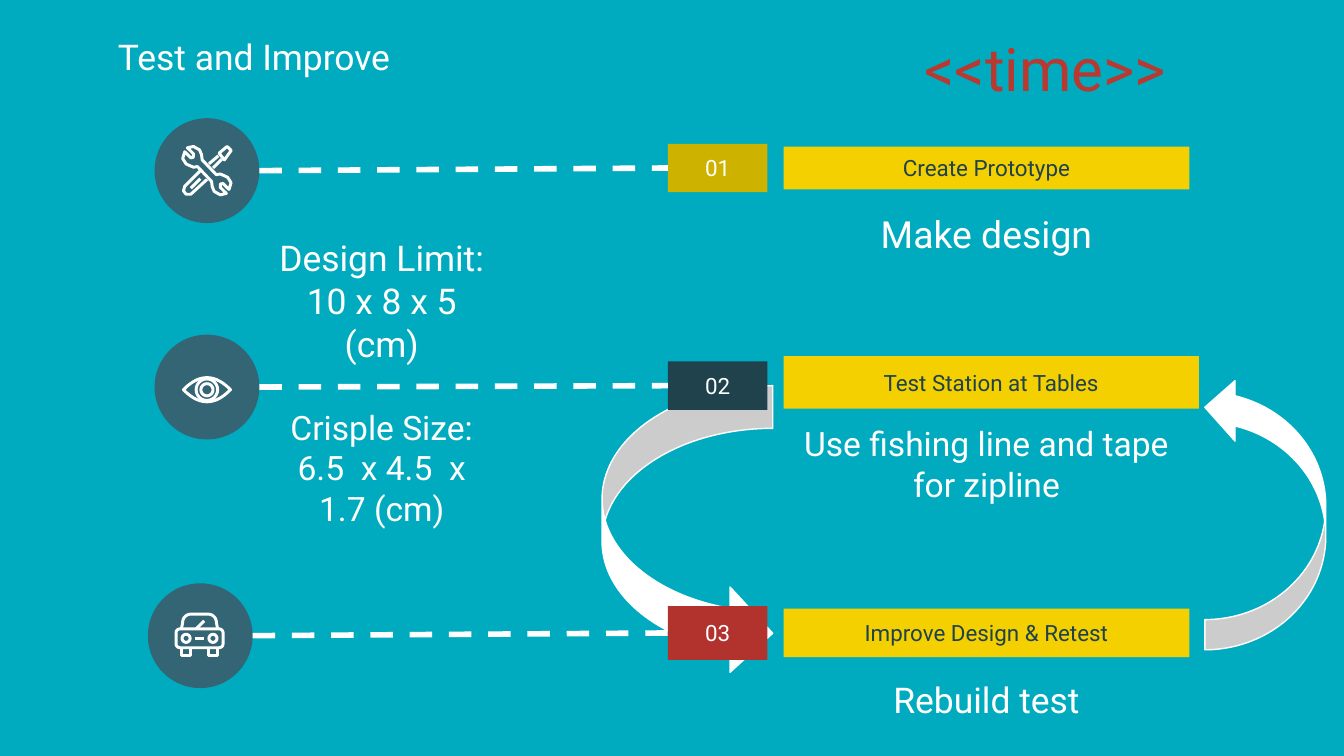
import math
import pptx
import pptx.util
import pptx.dml.color
import pptx.enum.dml
import pptx.enum.shapes
import pptx.enum.text
import pptx.oxml.ns
import lxml.etree

Inches = pptx.util.Inches
Pt = pptx.util.Pt
KIND = pptx.enum.shapes.MSO_SHAPE
ALIGN = pptx.enum.text.PP_ALIGN
ANCHOR = pptx.enum.text.MSO_ANCHOR

FONT = "Roboto"
HEX = {"back": "00ABBF", "white": "FFFFFF", "bar": "F4D000", "ink": "1F424C",
       "gold": "CEB200", "red": "B2322E", "disc": "336574", "time": "B93830"}

# Boxes are left, top, width, height in inches; discs are centre points.
STEPS = [
    {"no": "01", "tag": (4.97, 1.07, 0.74, 0.36), "hue": "gold",
     "name": "Create Prototype", "bar": (5.83, 1.09, 3.02, 0.32),
     "note": "Make design", "size": 20, "box": (5.83, 1.56, 3.02, 0.36),
     "disc": (1.54, 1.27), "icon": "tools"},
    {"no": "02", "tag": (4.97, 2.69, 0.74, 0.36), "hue": "ink",
     "name": "Test Station at Tables", "bar": (5.83, 2.65, 3.09, 0.39),
     "note": "Use fishing line and tape for zipline", "size": 18,
     "box": (5.83, 3.03, 3.02, 0.84),
     "disc": (1.54, 2.88), "icon": "eye"},
    {"no": "03", "tag": (4.97, 4.51, 0.74, 0.4), "hue": "red",
     "name": "Improve Design & Retest", "bar": (5.83, 4.53, 3.02, 0.36),
     "note": "Rebuild test", "size": 19, "box": (5.83, 4.89, 3.02, 0.63),
     "disc": (1.49, 4.73), "icon": "car"},
]
LIMITS = [("Design Limit: 10 x 8 x 5 (cm)", 19),
          ("Crisple Size: 6.5  x 4.5  x 1.7 (cm)", 18)]
RADIUS = 0.39


def arc(x, y, r, start=0, end=360):
    turns = [math.radians(start + (end - start) * i / 24) for i in range(25)]
    return [(x + r * math.cos(t), y + r * math.sin(t)) for t in turns]


def mirror(points):
    """Add the points turned half a turn about the centre."""
    return points + [(-x, -y) for x, y in points]


# Icon strokes: (closed, points) in hundredths of an inch from the disc centre.
JAW = [(7, 3), (-3.5, -8), (-4, -12), (-5.5, -15.5), (-10, -18), (-14.5, -17),
       (-10, -12.5), (-10, -10), (-12, -9.5), (-16.5, -14), (-18, -9),
       (-15.5, -5), (-10, -2.5), (-7, -3)]
LID = [(x, 2 - 9 * (1 - (x / 17.5) ** 2)) for x in
       [-17.5 + 2.5 * i for i in range(15)]]
ICONS = {
    "tools": [
        (True, mirror(JAW)),
        (True, [(9, -13), (15, -18), (18, -15), (13, -8)]),
        (False, [(8.5, -11), (1.5, -5)]),
        (False, [(11, -8.5), (4.5, -2)]),
        (False, [(-5, 0), (-16.5, 11.5), (-17.5, 15), (-15.5, 17.5),
                 (-12, 17.5), (0, 6.5)]),
        (False, [(-12, 13), (-5, 6)]),
    ],
    "eye": [
        (True, LID + [(x, 4 - y) for x, y in reversed(LID)]),
        (True, arc(0, 2, 8)),
        (True, arc(0, 2, 4.5)),
    ],
    "car": [
        (True, arc(-15, -2, 3, 180, 270) + arc(14, -2, 3, 270, 360)
         + arc(14, 6, 3, 0, 90) + arc(-15, 6, 3, 90, 180)),
        (False, [(-14, -5)] + arc(-7, -10, 6, 180, 270)
         + arc(6, -10, 6, 270, 360) + [(13, -5)]),
        (False, [(-14, 9), (-14, 15), (-7, 15), (-7, 9)]),
        (False, [(6, 9), (6, 15), (13, 15), (13, 9)]),
        (True, arc(-10.5, 2, 3)),
        (True, arc(9.5, 2, 3)),
        (False, [(-4, 2), (3, 2)]),
        (False, [(-3, -5), (3, -11)]),
    ],
}

deck = pptx.Presentation()
deck.slide_width, deck.slide_height = Inches(10), Inches(10 * 9 / 16)
slide = deck.slides.add_slide(deck.slide_layouts[6])
shapes = slide.shapes


def rgb(name):
    return pptx.dml.color.RGBColor.from_string(HEX[name])


def place(box):
    return [Inches(v) for v in box]


def write(shape, lines, hue="white", align=ALIGN.CENTER,
          anchor=ANCHOR.MIDDLE, gap=0):
    frame = shape.text_frame
    frame.word_wrap = True
    frame.vertical_anchor = anchor
    frame.margin_left = frame.margin_right = Inches(0.1)
    frame.margin_top = frame.margin_bottom = Inches(0.1)
    for i, (text, size) in enumerate(lines):
        para = frame.add_paragraph() if i else frame.paragraphs[0]
        para.alignment = align
        para.space_before = Pt(gap if i else 0)
        run = para.add_run()
        run.text = text
        run.font.name, run.font.size = FONT, Pt(size)
        run.font.color.rgb = rgb(hue)


def label(box, lines, **style):
    write(shapes.add_textbox(*place(box)), lines, **style)


def solid(kind, box, hue):
    shape = shapes.add_shape(kind, *place(box))
    shape.shadow.inherit = False
    shape.fill.solid()
    shape.fill.fore_color.rgb = rgb(hue)
    shape.line.fill.background()
    return shape


def loop(kind, box, turn=0):
    shape = solid(kind, box, "white")
    shape.rotation = turn
    shape.line.color.rgb = rgb("white")
    shape.line.width = Pt(0.75)
    for i, part in enumerate((0.25, 0.5, 0.25)):
        shape.adjustments[i] = part


def dash(x, y, tag):
    """Run a dashed line from a disc's edge to the left side of a tag."""
    line = shapes.add_connector(pptx.enum.shapes.MSO_CONNECTOR.STRAIGHT,
                                *place((x, y, x, y)))
    line.end_connect(tag, 1)
    line.line.color.rgb = rgb("white")
    line.line.width = Pt(3)
    line.line.dash_style = pptx.enum.dml.MSO_LINE.DASH
    props = line._element.spPr
    lxml.etree.SubElement(props, pptx.oxml.ns.qn("a:effectLst"))


def sketch(strokes, x, y):
    for closed, points in strokes:
        spots = [(Inches(x + a / 100), Inches(y + b / 100)) for a, b in points]
        pen = shapes.build_freeform(*spots[0])
        pen.add_line_segments(spots[1:], close=closed)
        shape = pen.convert_to_shape()
        shape.shadow.inherit = False
        shape.fill.background()
        shape.line.color.rgb = rgb("white")
        shape.line.width = Pt(1.6)


slide.background.fill.solid()
slide.background.fill.fore_color.rgb = rgb("back")
loop(KIND.CURVED_RIGHT_ARROW, (4.48, 2.87, 1.27, 2.16))
label((0.78, 0.16, 8.44, 0.63), [("Test and Improve", 19)],
      align=ALIGN.LEFT, anchor=ANCHOR.TOP)

for step in STEPS:
    bar = solid(KIND.RECTANGLE, step["bar"], "bar")
    write(bar, [(step["name"], 12)], hue="ink")
    label(step["box"], [(step["note"], step["size"])])
    tag = solid(KIND.RECTANGLE, step["tag"], step["hue"])
    write(tag, [(step["no"], 12)])
    x, y = step["disc"]
    solid(KIND.OVAL, (x - RADIUS, y - RADIUS, 2 * RADIUS, 2 * RADIUS), "disc")
    dash(x + RADIUS, y, tag)
    sketch(ICONS[step["icon"]], x, y)

loop(KIND.CURVED_UP_ARROW, (8.4, 3.37, 2.03, 0.9), turn=270)
label((6.78, 0.14, 2.77, 0.67), [("<<time>>", 32)], hue="time",
      align=ALIGN.LEFT, anchor=ANCHOR.TOP)
label((1.93, 1.66, 1.82, 0.78), LIMITS, anchor=ANCHOR.TOP, gap=23)

deck.save("out.pptx")
